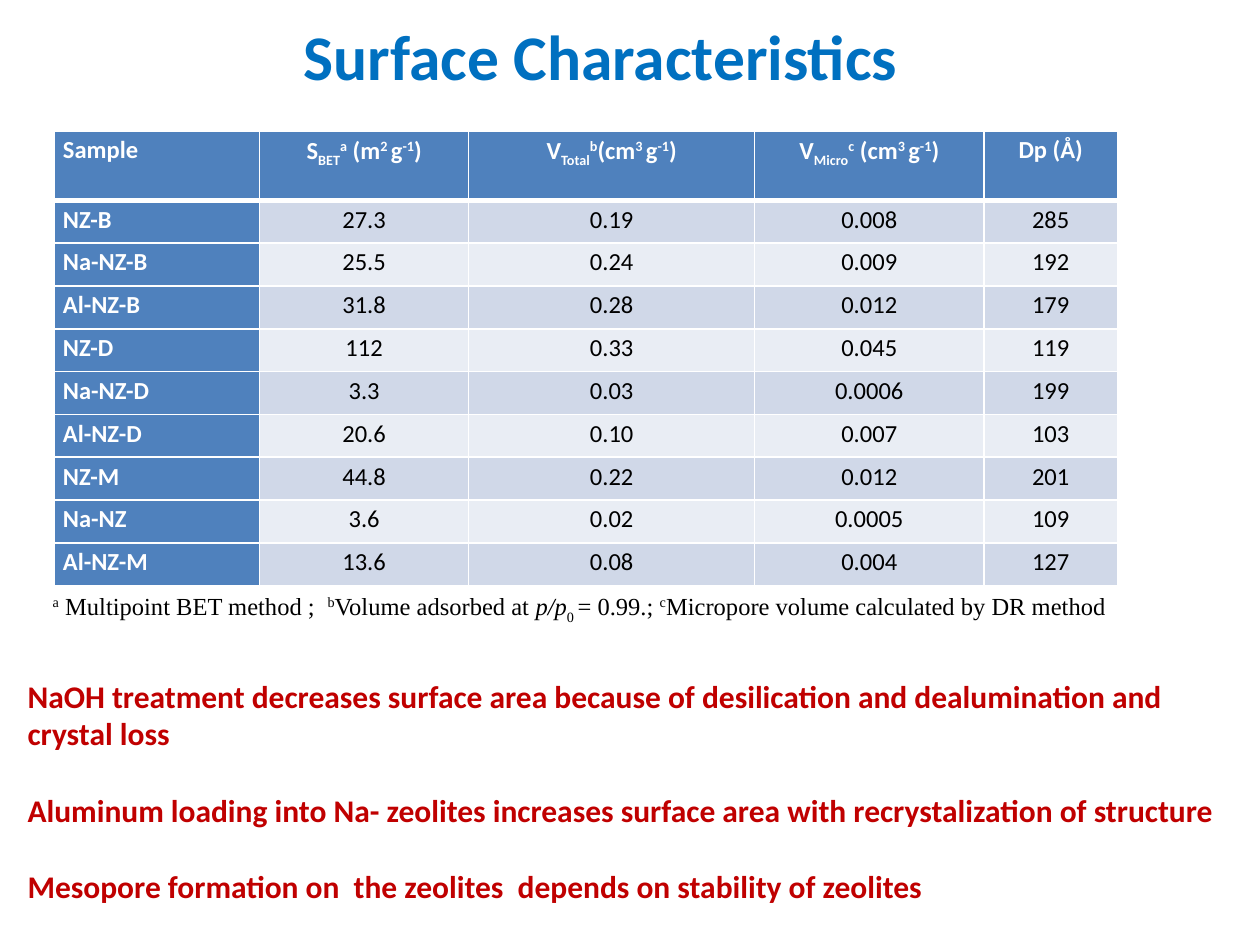
from typing import NamedTuple

from pptx import Presentation
from pptx.dml.color import RGBColor
from pptx.enum.text import MSO_ANCHOR, PP_ALIGN
from pptx.oxml import parse_xml
from pptx.oxml.ns import nsdecls
from pptx.util import Inches, Pt


class Run(NamedTuple):
    text: str
    base: int = 0
    slant: bool = False


class Box(NamedTuple):
    left: float
    top: float
    width: float
    height: float


WHITE, BLACK, BLUE = "FFFFFF", "000000", "4F81BD"
BANDS = ["D0D8E8", "E9EDF4"]
WIDTHS = [1.63, 1.66, 2.27, 1.82, 1.06]
HEAD, ROW = 0.55, 0.34


def color(code: str) -> RGBColor:
    return RGBColor.from_string(code)


def write(frame, *lines, size=14, font="Calibri", fill=BLACK, bold=False,
          align=PP_ALIGN.LEFT, space=None, gap=0) -> None:
    frame.word_wrap = True
    for i, line in enumerate(lines):
        para = frame.add_paragraph() if i else frame.paragraphs[0]
        para.alignment = align
        if space:
            para.line_spacing = space
        if i and gap:
            para.space_before = Pt(gap)
        for part in [Run(line)] if isinstance(line, str) else line:
            run = para.add_run()
            run.text = part.text
            face = run.font
            face.name, face.size, face.bold = font, Pt(size), bold
            face.italic = part.slant
            face.color.rgb = color(fill)
            if part.base:
                run._r.get_or_add_rPr().set("baseline", str(part.base * 1000))


def label(slide, box: Box, *lines, anchor=MSO_ANCHOR.TOP, **style) -> None:
    frame = slide.shapes.add_textbox(*map(Inches, box)).text_frame
    frame.vertical_anchor = anchor
    write(frame, *lines, **style)


def border(cell, **sides: float) -> None:
    props = cell._tc.get_or_add_tcPr()
    for side, width in sides.items():
        props.append(parse_xml(
            f'<a:ln{side} {nsdecls("a")} w="{Pt(width)}"><a:solidFill>'
            f'<a:srgbClr val="{WHITE}"/></a:solidFill></a:ln{side}>'))


def unit(sign: str, sub: str, note: str, lead: str) -> list[Run]:
    return [Run(sign), Run(sub, -25), Run(note, 30), Run(lead),
            Run(lead[-1:] and ("2 " if lead.endswith("(m") else "3 "), 30),
            Run("g"), Run("-1", 30), Run(")")]


def grid(slide, box: Box, rows: list) -> None:
    table = slide.shapes.add_table(
        len(rows), len(WIDTHS), *map(Inches, box)).table
    for col, width in zip(table.columns, WIDTHS):
        col.width = Inches(width)
    for r, row in enumerate(rows):
        table.rows[r].height = Inches(ROW if r else HEAD)
        for c, text in enumerate(row):
            cell = table.cell(r, c)
            cell.margin_left = cell.margin_right = Inches(0.07)
            cell.margin_top = cell.margin_bottom = 0
            border(cell, L=1, R=1, T=3 if r == 1 else 1, B=1 if r else 3)
            key = r == 0 or c == 0
            cell.fill.solid()
            cell.fill.fore_color.rgb = color(BLUE if key else BANDS[(r - 1) % 2])
            write(cell.text_frame, text, fill=WHITE if key else BLACK, bold=key,
                  align=PP_ALIGN.CENTER if c else PP_ALIGN.LEFT, space=1.15)


def main() -> None:
    deck = Presentation()
    deck.slide_width, deck.slide_height = Inches(10), Inches(7.5)
    slide = deck.slides.add_slide(deck.slide_layouts[6])

    label(slide, Box(0.67, 0.13, 8.2, 0.61), "Surface Characteristics",
          size=36.3, fill="0070C0", bold=True, align=PP_ALIGN.CENTER,
          anchor=MSO_ANCHOR.MIDDLE)

    grid(slide, Box(0.43, 1.04, sum(WIDTHS), HEAD + 9 * ROW), [
        ["Sample", unit("S", "BET", "a", " (m"), unit("V", "Total", "b", "(cm"),
         unit("V", "Micro", "c", " (cm"), "Dp (Å)"],
        ["NZ-B", "27.3", "0.19", "0.008", "285"],
        ["Na-NZ-B", "25.5", "0.24", "0.009", "192"],
        ["Al-NZ-B", "31.8", "0.28", "0.012", "179"],
        ["NZ-D", "112", "0.33", "0.045", "119"],
        ["Na-NZ-D", "3.3", "0.03", "0.0006", "199"],
        ["Al-NZ-D", "20.6", "0.10", "0.007", "103"],
        ["NZ-M", "44.8", "0.22", "0.012", "201"],
        ["Na-NZ", "3.6", "0.02", "0.0005", "109"],
        ["Al-NZ-M", "13.6", "0.08", "0.004", "127"],
    ])

    label(slide, Box(0.32, 4.64, 8.9, 0.34), [
        Run("a", 30), Run(" Multipoint BET method ;  "),
        Run("b", 30), Run("Volume adsorbed at "), Run("p/p", slant=True),
        Run("0 ", -30), Run("= 0.99.; "),
        Run("c", 30), Run("Micropore volume calculated by DR method"),
    ], font="Times New Roman")

    label(slide, Box(0.12, 5.32, 9.69, 1.92),
          "NaOH treatment decreases surface area because of desilication"
          " and dealumination and crystal loss",
          "Aluminum loading into Na- zeolites increases surface area"
          " with recrystalization of structure",
          "Mesopore formation on  the zeolites  depends on stability of zeolites",
          size=18, fill="C00000", bold=True, gap=22)

    deck.save("out.pptx")


if __name__ == "__main__":
    main()
